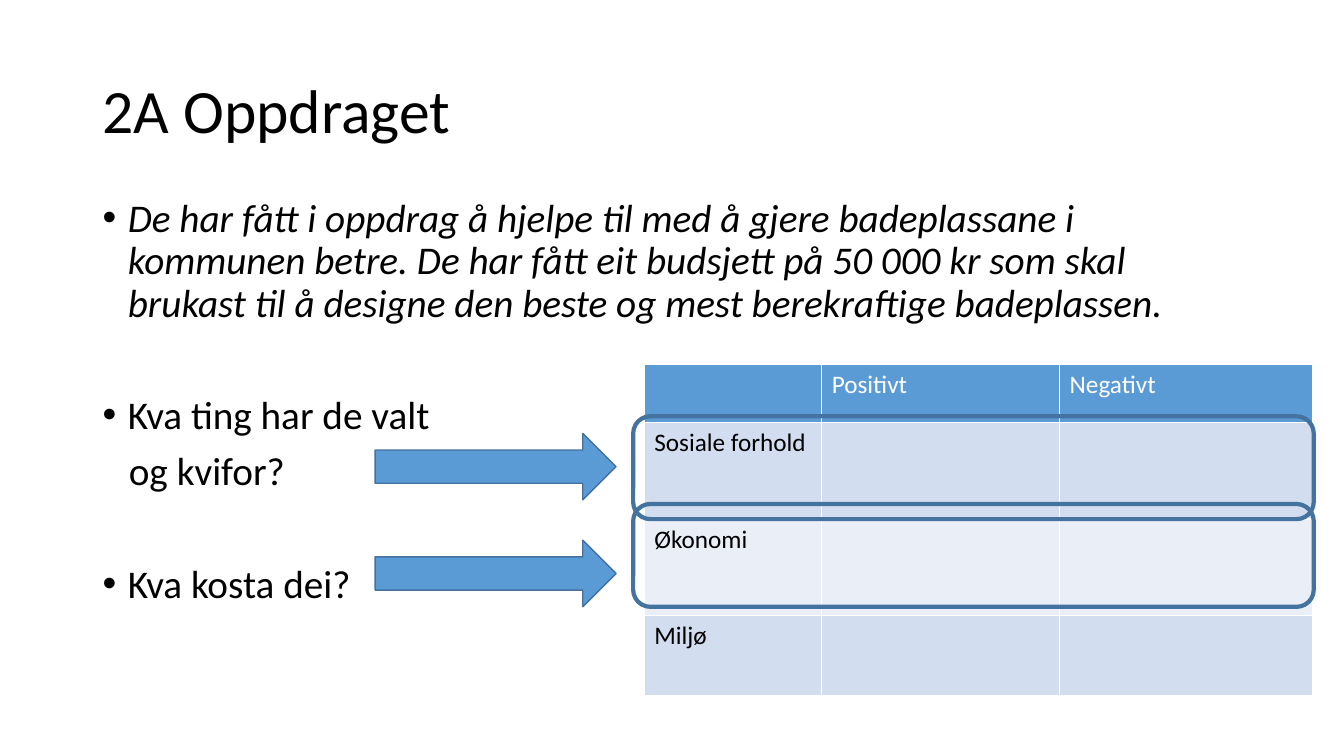
from dataclasses import dataclass

from lxml import etree
from pptx import Presentation
from pptx import util as u
from pptx.dml.color import RGBColor
from pptx.enum import shapes, text
from pptx.oxml.ns import qn


@dataclass(frozen=True)
class Theme:
    """Colours and type sizes of the slide."""
    font: str = "Calibri"
    ink: str = "000000"
    light: str = "FFFFFF"
    accent: str = "5B9BD5"
    outline: str = "43739E"
    bands: tuple = ("D2DEEF", "EAEFF7")
    title_size: int = 44
    body_size: int = 28
    table_size: int = 18


THEME = Theme()


def set_attributes(target, values):
    """Set each named format value on the target."""
    for name, value in values.items():
        setattr(target, name, value)


def add_span(para, words, size, colour, italic=False):
    """Add one formatted run to a paragraph."""
    span = para.add_run()
    span.text = words
    set_attributes(span.font, {"name": THEME.font, "size": u.Pt(size),
                               "bold": False, "italic": italic})
    span.font.color.rgb = RGBColor.from_string(colour)


def add_text_box(page, place, anchor):
    """Add a wrapping text box and return its text frame."""
    box = page.shapes.add_textbox(*map(u.Inches, place))
    set_attributes(box.text_frame, {"word_wrap": True, "vertical_anchor": anchor})
    return box.text_frame


def set_indent(para, margin, bulleted):
    """Set the left margin and, if wanted, a hanging bullet."""
    props = para._p.get_or_add_pPr()
    props.set("marL", str(u.Inches(margin)))
    if bulleted:
        props.set("indent", str(-u.Inches(margin)))
        etree.SubElement(props, qn("a:buFont"), typeface="Arial")
        etree.SubElement(props, qn("a:buChar"), char="•")


def add_title(page, words):
    """Add the slide title."""
    frame = add_text_box(page, (0.92, 0.4, 11.5, 1.45), text.MSO_ANCHOR.MIDDLE)
    para = frame.paragraphs[0]
    para.line_spacing = 0.9
    add_span(para, words, THEME.title_size, THEME.ink)


def add_body(page, entries):
    """Add body paragraphs given as words, space before, margin, bullet, italic."""
    frame = add_text_box(page, (0.92, 1.92, 11.5, 4.76), text.MSO_ANCHOR.TOP)
    for index, (words, space, margin, bulleted, italic) in enumerate(entries):
        para = frame.add_paragraph() if index else frame.paragraphs[0]
        set_attributes(para, {"line_spacing": 0.9, "space_before": u.Pt(space)})
        set_indent(para, margin, bulleted)
        add_span(para, words, THEME.body_size, THEME.ink, italic)


def add_grid(page, rows, widths, heights):
    """Add the table with a coloured header and banded rows."""
    place = (6.39, 3.62, sum(widths), sum(heights))
    table = page.shapes.add_table(len(rows), len(widths), *map(u.Inches, place)).table
    for column, width in zip(table.columns, widths):
        column.width = u.Inches(width)
    for r, (row, height) in enumerate(zip(rows, heights)):
        table.rows[r].height = u.Inches(height)
        fill = THEME.bands[(r - 1) % 2] if r else THEME.accent
        for c, words in enumerate(row):
            cell = table.cell(r, c)
            cell.fill.solid()
            cell.fill.fore_color.rgb = RGBColor.from_string(fill)
            if words:
                add_span(cell.text_frame.paragraphs[0], words, THEME.table_size,
                         THEME.ink if r else THEME.light)


def add_outlined(page, kind, place, line_width, fill=None):
    """Add a preset shape with an outline and an optional fill."""
    shape = page.shapes.add_shape(kind, *map(u.Inches, place))
    shape.shadow.inherit = False
    if fill:
        shape.fill.solid()
        shape.fill.fore_color.rgb = RGBColor.from_string(fill)
    else:
        shape.fill.background()
    shape.line.color.rgb = RGBColor.from_string(THEME.outline)
    shape.line.width = u.Pt(line_width)


def main():
    """Build and save the slide."""
    deck = Presentation()
    set_attributes(deck, {"slide_width": u.Inches(13.33), "slide_height": u.Inches(7.5)})
    page = deck.slides.add_slide(deck.slide_layouts[6])
    add_title(page, "2A Oppdraget")
    add_body(page, [
        ("De har fått i oppdrag å hjelpe til med å gjere badeplassane i kommunen betre. "
         "De har fått eit budsjett på 50 000 kr som skal brukast til å designe den beste "
         "og mest berekraftige badeplassen.", 10, 0.25, True, True),
        ("Kva ting har de valt", 50, 0.25, True, False),
        ("og kvifor?", 10, 0.26, False, False),
        ("Kva kosta dei?", 50, 0.25, True, False),
    ])
    add_grid(page, [
        ("", "Positivt", "Negativt"),
        ("Sosiale forhold", "", ""),
        ("Økonomi", "", ""),
        ("Miljø", "", ""),
    ], (1.76, 2.36, 2.51), (0.57, 0.96, 0.96, 0.79))
    for top in (4.13, 5):
        add_outlined(page, shapes.MSO_SHAPE.ROUNDED_RECTANGLE, (6.28, top, 6.75, 1.02), 3)
    for top in (4.3, 5.36):
        add_outlined(page, shapes.MSO_SHAPE.RIGHT_ARROW, (3.72, top, 2.39, 0.66), 1,
                     THEME.accent)
    deck.save("out.pptx")


if __name__ == "__main__":
    main()
